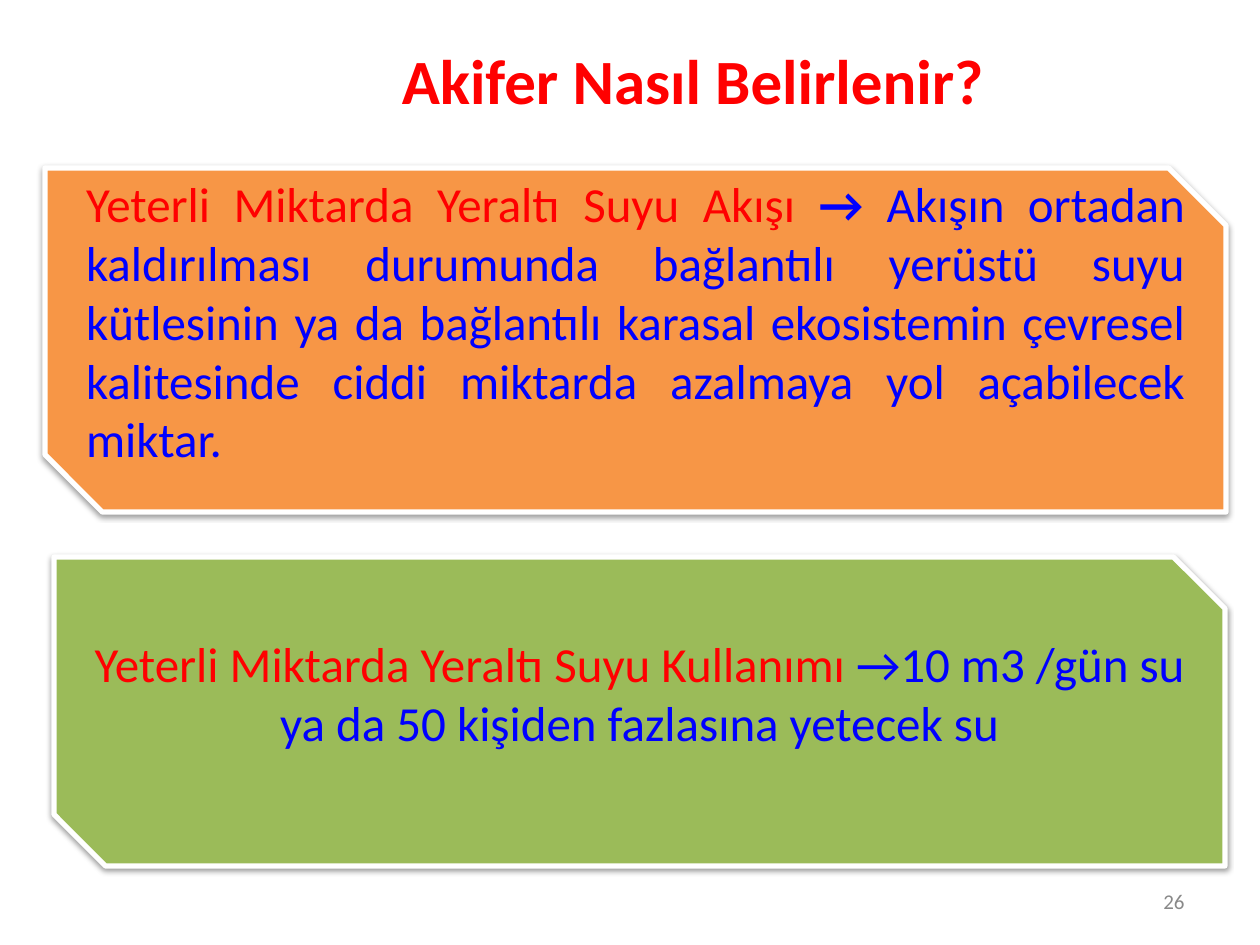
from lxml import etree
from pptx import Presentation
from pptx.dml.color import RGBColor
from pptx.enum.shapes import MSO_SHAPE
from pptx.enum.text import MSO_ANCHOR, PP_ALIGN
from pptx.oxml.ns import qn
from pptx.util import Emu, Pt

SNIPPED = MSO_SHAPE.SNIP_2_DIAG_RECTANGLE
MIDDLE = MSO_ANCHOR.MIDDLE
CENTER, RIGHT, JUSTIFY = PP_ALIGN.CENTER, PP_ALIGN.RIGHT, PP_ALIGN.JUSTIFY
COLORS = {
    "red": "FF0000",
    "blue": "0000FF",
    "gray": "898989",
    "orange": "F79646",
    "green": "9BBB59",
    "white": "FFFFFF",
    "black": "000000",
}


def px(length):
    return Emu(round(length * 914400 / 126))


def rgb(name):
    return RGBColor.from_string(COLORS[name])


class SlideBuilder:
    """Holds the text style and the current slide, and adds elements to it."""

    def __init__(self, slide, font):
        self.slide = slide
        self.font = font

    def add_runs(self, frame, runs, size, align):
        frame.word_wrap = True
        frame.vertical_anchor = MIDDLE
        paragraph = frame.paragraphs[0]
        paragraph.alignment = align
        for words, color, bold in runs:
            run = paragraph.add_run()
            run.text = words
            run.font.name = self.font
            run.font.size = Pt(size)
            run.font.bold = bold
            run.font.color.rgb = rgb(color)

    def text(self, box, runs, size, align):
        label = self.slide.shapes.add_textbox(*map(px, box))
        self.add_runs(label.text_frame, runs, size, align)

    def panel(self, box, fill, runs, align):
        panel = self.slide.shapes.add_shape(SNIPPED, *map(px, box))
        panel.fill.solid()
        panel.fill.fore_color.rgb = rgb(fill)
        panel.line.color.rgb = rgb("white")
        panel.line.width = Pt(3)
        self.shadow(panel)
        panel.text_frame.margin_bottom = px(45)
        self.add_runs(panel.text_frame, runs, 28, align)

    def shadow(self, panel):
        panel.shadow.inherit = False
        effects = panel._element.spPr.find(qn("a:effectLst"))
        outer = etree.SubElement(effects, qn("a:outerShdw"), blurRad=str(Pt(3.1)),
                                 dist=str(Pt(1.6)), dir="5400000", rotWithShape="0")
        color = etree.SubElement(outer, qn("a:srgbClr"), val=COLORS["black"])
        etree.SubElement(color, qn("a:alpha"), val="38000")


def main():
    deck = Presentation()
    deck.slide_width, deck.slide_height = px(1260), px(945)
    builder = SlideBuilder(deck.slides.add_slide(deck.slide_layouts[6]), "Calibri")

    builder.text((126, 0, 1134, 158), [("Akifer Nasıl Belirlenir?", "red", True)], 36, CENTER)
    builder.text((903, 876, 294, 50), [("26", "gray", False)], 12, RIGHT)

    usage = [
        ("Yeterli Miktarda Yeraltı Suyu Kullanımı ", "red", False),
        ("→10 m3 /gün su ya da 50 kişiden fazlasına yetecek su", "blue", False),
    ]
    builder.panel((54, 557, 1171, 309), "green", usage, CENTER)

    flow = [
        ("Yeterli Miktarda Yeraltı Suyu Akışı ", "red", False),
        ("→ ", "blue", True),
        ("Akışın ortadan kaldırılması durumunda bağlantılı yerüstü suyu kütlesinin "
         "ya da bağlantılı karasal ekosistemin çevresel kalitesinde ciddi miktarda "
         "azalmaya yol açabilecek miktar.", "blue", False),
    ]
    builder.panel((45, 168, 1181, 344), "orange", flow, JUSTIFY)

    deck.save("out.pptx")


if __name__ == "__main__":
    main()
